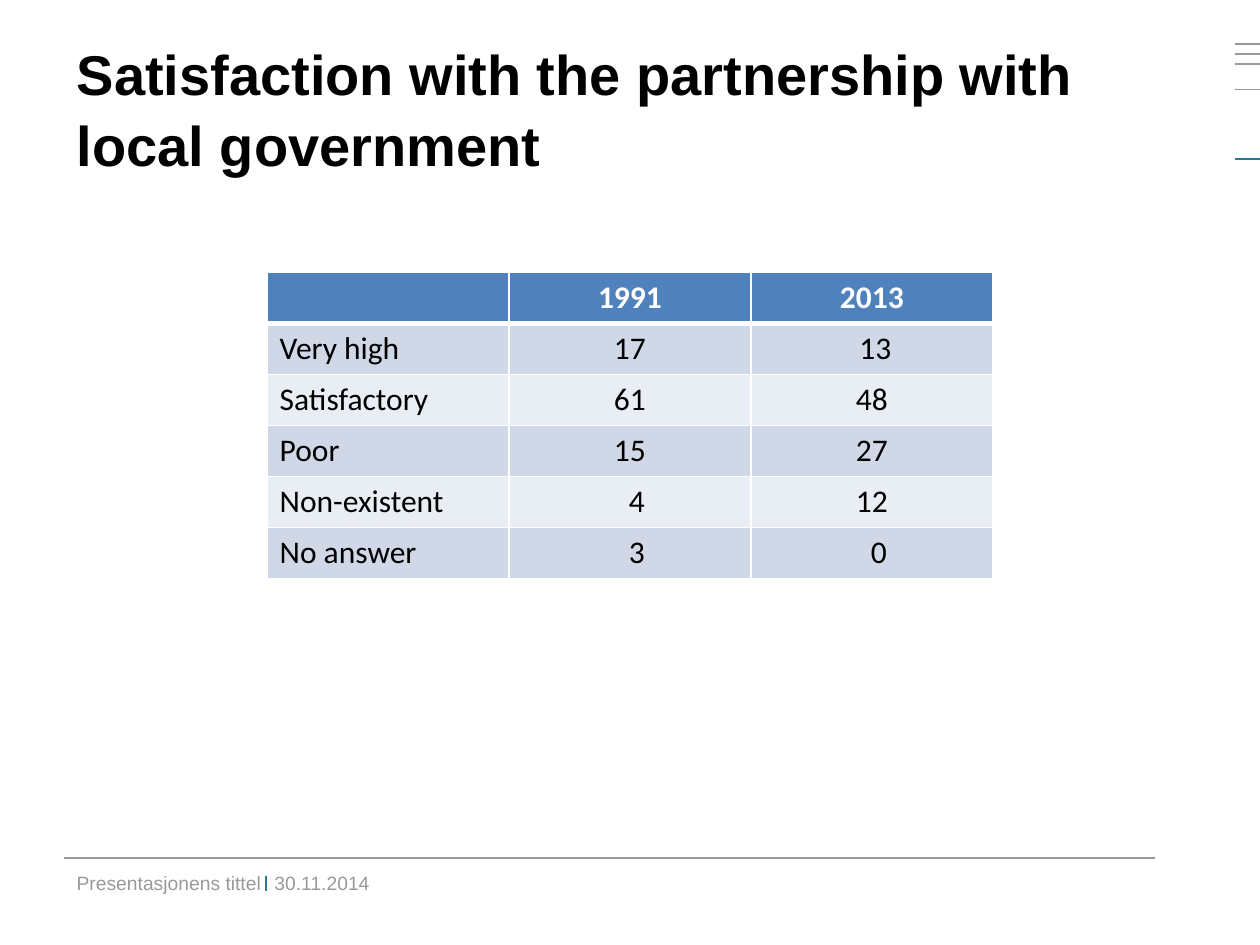
import pptx
import pptx.dml.color
import pptx.enum.shapes
import pptx.enum.text
import pptx.oxml.ns
import pptx.util
from lxml import etree

Inches, Pt = pptx.util.Inches, pptx.util.Pt
ALIGN, ANCHOR = pptx.enum.text.PP_ALIGN, pptx.enum.text.MSO_ANCHOR
qn = pptx.oxml.ns.qn

COLOURS = {
    "black": "000000", "white": "FFFFFF", "grey": "999999", "teal": "277D90",
    "header": "4F81BD", "odd": "D0D8E8", "even": "E9EDF4",
}
TITLE = "Satisfaction with the partnership with local government"
FOOTER = "Presentasjonens tittel\t30.11.2014"
TABLE = [
    ("", "1991", "2013"),
    ("Very high", "17", " 13"),
    ("Satisfactory", "61", "48"),
    ("Poor", "15", "27"),
    ("Non-existent", "4", "12"),
    ("No answer", "3", "0"),
]
SLIDE_WIDTH, SLIDE_HEIGHT = 10, 7.5
LEFT, CONTENT_WIDTH = 0.51, 8.66
FOOTER_TOP = 6.81
COLUMN_WIDTH, ROW_HEIGHT = 1.92, 0.405
TABLE_TOP = 2.16
CELL_MARGIN, DIGIT_WIDTH = 0.1, 0.11
EDGE_MARKS = [(0.35, "grey"), (0.43, "grey"), (0.51, "grey"),
              (0.71, "grey"), (1.26, "teal")]
EDGE_MARK_LENGTH = 0.2


def rgb(name):
    return pptx.dml.color.RGBColor.from_string(COLOURS[name])


def add_line(slide, start, end, colour):
    line = slide.shapes.add_connector(
        pptx.enum.shapes.MSO_CONNECTOR.STRAIGHT,
        *(Inches(value) for value in (*start, *end)))
    line.line.color.rgb = rgb(colour)
    line.line.width = Pt(1)
    etree.SubElement(line._element.spPr, qn("a:effectLst"))


def add_run(paragraph, text, font, size, colour, bold=False):
    run = paragraph.add_run()
    run.text = text
    run.font.name, run.font.size, run.font.bold = font, Pt(size), bold
    run.font.color.rgb = rgb(colour)


def set_borders(cell, widths):
    """Give white borders, with widths in points keyed by side (L, R, T, B)."""
    properties = cell._tc.get_or_add_tcPr()
    for position, (side, width) in enumerate(widths.items()):
        border = etree.Element(qn(f"a:ln{side}"), w=str(Pt(width)))
        fill = etree.SubElement(border, qn("a:solidFill"))
        etree.SubElement(fill, qn("a:srgbClr"), val=COLOURS["white"])
        properties.insert(position, border)


def add_title(slide):
    title = slide.shapes.title
    title.left, title.top = Inches(LEFT), Inches(0.24)
    title.width, title.height = Inches(CONTENT_WIDTH), Inches(1.39)
    frame = title.text_frame
    frame.vertical_anchor = ANCHOR.TOP
    frame.auto_size = pptx.enum.text.MSO_AUTO_SIZE.NONE
    paragraph = frame.paragraphs[0]
    paragraph.alignment = ALIGN.LEFT
    paragraph.line_spacing = 1.05
    add_run(paragraph, TITLE, "Arial", 32, "black", bold=True)


def add_satisfaction_table(slide):
    rows, columns = len(TABLE), len(TABLE[0])
    width = columns * COLUMN_WIDTH
    table = slide.shapes.add_table(
        rows, columns, Inches((SLIDE_WIDTH - width) / 2), Inches(TABLE_TOP),
        Inches(width), Inches(rows * ROW_HEIGHT)).table
    for column in table.columns:
        column.width = Inches(COLUMN_WIDTH)
    for row_index, values in enumerate(TABLE):
        header = row_index == 0
        fill = "header" if header else ("even", "odd")[row_index % 2]
        for column_index, text in enumerate(values):
            cell = table.cell(row_index, column_index)
            cell.fill.solid()
            cell.fill.fore_color.rgb = rgb(fill)
            set_borders(cell, {"L": 1, "R": 1, "T": 3 if row_index == 1 else 1,
                               "B": 3 if header else 1})
            # Single digits line up under the units of the longer numbers.
            indent = DIGIT_WIDTH if len(text) == 1 else 0
            cell.margin_left = Inches(CELL_MARGIN + indent)
            paragraph = cell.text_frame.paragraphs[0]
            paragraph.alignment = ALIGN.CENTER if column_index else ALIGN.LEFT
            if text:
                add_run(paragraph, text, "Calibri", 18,
                        "white" if header else "black", bold=header)
            else:
                paragraph.font.size = Pt(18)


def add_footer(slide):
    box = slide.shapes.add_textbox(
        Inches(LEFT), Inches(FOOTER_TOP), Inches(4.5), Inches(0.4))
    frame = box.text_frame
    frame.word_wrap = True
    frame.vertical_anchor = ANCHOR.MIDDLE
    paragraph = frame.paragraphs[0]
    tabs = etree.SubElement(paragraph._p.get_or_add_pPr(), qn("a:tabLst"))
    etree.SubElement(tabs, qn("a:tab"), pos=str(Inches(1.57)), algn="l")
    add_run(paragraph, FOOTER, "Arial", 11, "grey")


def main():
    presentation = pptx.Presentation()
    presentation.slide_width = Inches(SLIDE_WIDTH)
    presentation.slide_height = Inches(SLIDE_HEIGHT)
    slide = presentation.slides.add_slide(presentation.slide_layouts[5])

    add_line(slide, (LEFT, FOOTER_TOP), (LEFT + CONTENT_WIDTH, FOOTER_TOP), "grey")
    add_line(slide, (2.11, 6.95), (2.11, 7.07), "teal")
    for top, colour in EDGE_MARKS:
        add_line(slide, (SLIDE_WIDTH - EDGE_MARK_LENGTH, top),
                 (SLIDE_WIDTH, top), colour)
    add_title(slide)
    add_satisfaction_table(slide)
    add_footer(slide)
    presentation.save("out.pptx")


if __name__ == "__main__":
    main()
